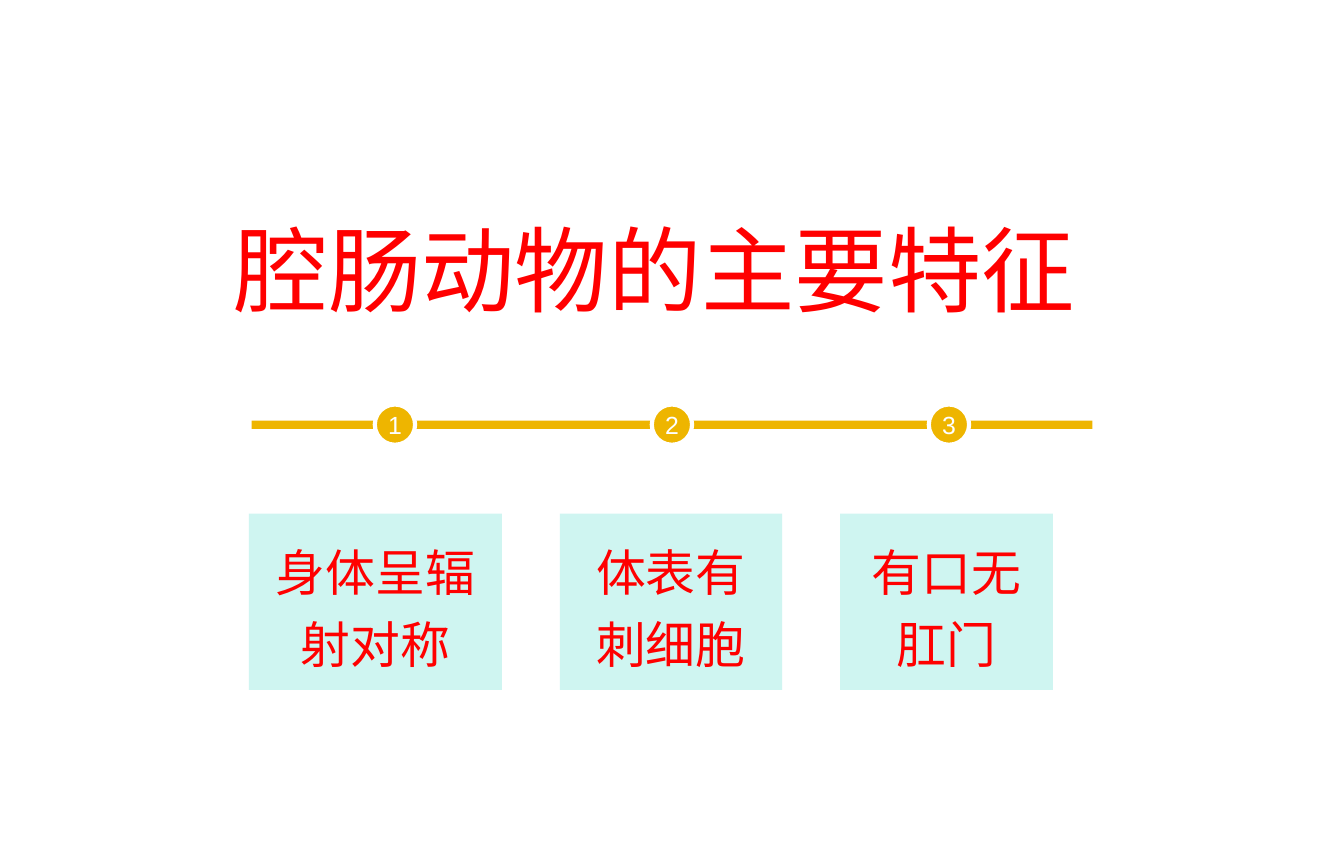
from pptx import Presentation
from pptx.dml.color import RGBColor
from pptx.enum.shapes import MSO_SHAPE as Shape
from pptx.enum.text import MSO_ANCHOR as Anchor, PP_ALIGN as Align
from pptx.util import Pt

COLORS = {
    "gold": "EEB500",
    "white": "FFFFFF",
    "number": "FEFFFF",
    "panel": "CFF5F1",
    "red": "FF0000",
}


class SlideBuilder:
    font = "Arial"

    def __init__(self, slide):
        self.slide = slide

    def color(self, name):
        return RGBColor.from_string(COLORS[name])

    def label(self, frame, text, size, color, spacing=None):
        frame.word_wrap = True
        frame.vertical_anchor = Anchor.MIDDLE
        frame.text = text
        paragraph = frame.paragraphs[0]
        paragraph.alignment = Align.CENTER
        if spacing:
            paragraph.line_spacing = spacing
        font = paragraph.runs[0].font
        font.name, font.size = self.font, Pt(size)
        font.color.rgb = self.color(color)

    def title(self, text, left, top, width, height):
        box = self.slide.shapes.add_textbox(Pt(left), Pt(top), Pt(width), Pt(height))
        self.label(box.text_frame, text, 50, "red")

    def block(self, kind, left, top, width, height, fill):
        block = self.slide.shapes.add_shape(kind, Pt(left), Pt(top), Pt(width), Pt(height))
        block.shadow.inherit = False
        block.fill.solid()
        block.fill.fore_color.rgb = self.color(fill)
        block.line.fill.background()
        return block

    def bar(self, left, top, width, height):
        self.block(Shape.RECTANGLE, left, top, width, height, "gold")

    def marker(self, number, left, top, size):
        marker = self.block(Shape.OVAL, left, top, size, size, "gold")
        marker.line.color.rgb = self.color("white")
        marker.line.width = Pt(2.25)
        frame = marker.text_frame
        frame.margin_left = frame.margin_right = 0
        frame.margin_top = frame.margin_bottom = 0
        self.label(frame, str(number), 13.3, "number")

    def panel(self, text, left, top, width, height):
        panel = self.block(Shape.RECTANGLE, left, top, width, height, "panel")
        self.label(panel.text_frame, text, 26.7, "red", spacing=1.2)


def main():
    deck = Presentation()
    deck.slide_width, deck.slide_height = Pt(720), Pt(450.72)
    builder = SlideBuilder(deck.slides.add_slide(deck.slide_layouts[6]))

    # Timeline bar
    builder.bar(134.8, 225.4, 450.4, 4.4)

    # Numbered markers, each with its feature panel below
    features = [("身体呈辐射对称", 135.5), ("体表有刺细胞", 119), ("有口无肛门", 114)]
    marker_size, marker_step = 21.6, 148.4
    first_marker = 360 - marker_step - marker_size / 2
    panel_left, panel_gap = 133.4, 31.1
    for index, (feature, width) in enumerate(features):
        builder.marker(index + 1, first_marker + index * marker_step, 216.8, marker_size)
        builder.panel(feature, panel_left, 275.3, width, 94.5)
        panel_left += width + panel_gap

    # Title
    builder.title("腔肠动物的主要特征", 86.4, 93.6, 529.2, 100.8)

    deck.save("out.pptx")


if __name__ == "__main__":
    main()
